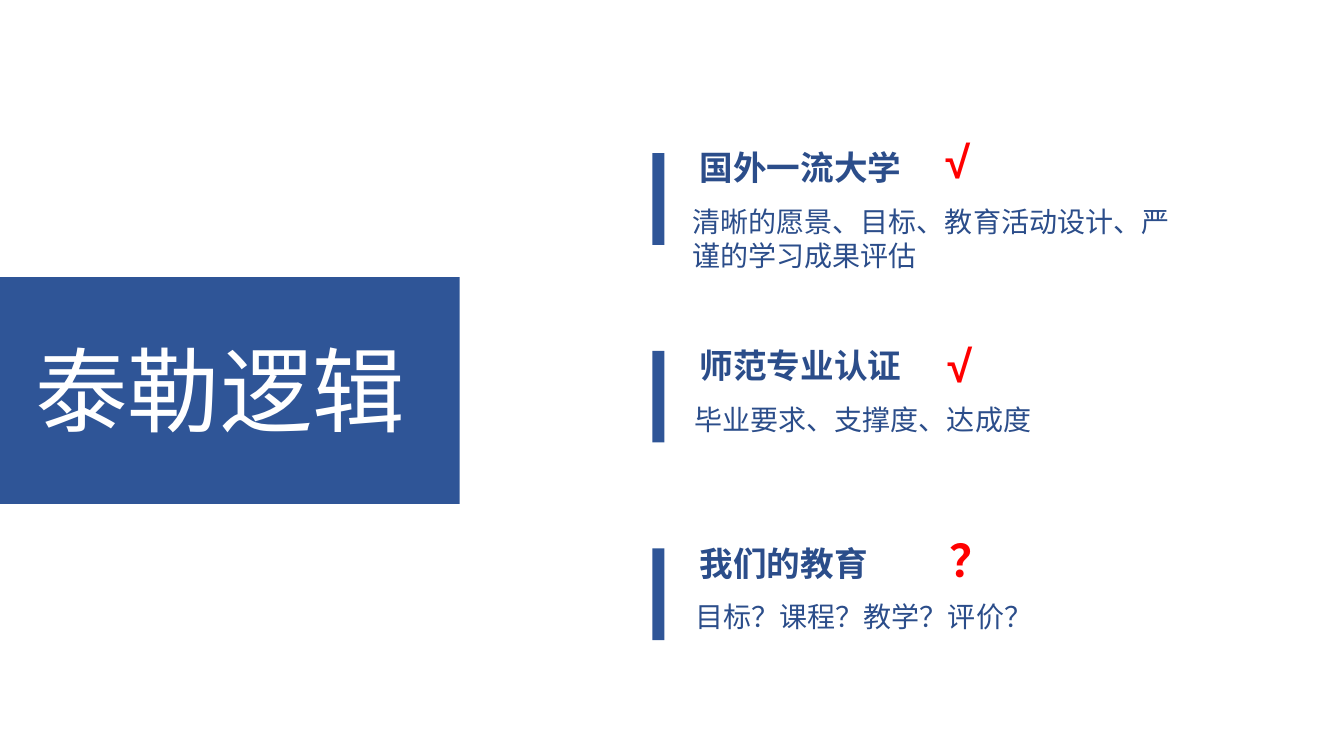
import pptx
import pptx.dml.color
import pptx.enum.shapes
import pptx.enum.text
import pptx.util

Inches = pptx.util.Inches
RGBColor = pptx.dml.color.RGBColor
Anchor = pptx.enum.text.MSO_ANCHOR
Align = pptx.enum.text.PP_ALIGN

BLUE = RGBColor(0x2F, 0x55, 0x97)
TEXT_BLUE = RGBColor(0x2B, 0x4D, 0x8A)
RED = RGBColor(0xFF, 0x00, 0x00)
WHITE = RGBColor(0xFF, 0xFF, 0xFF)


def write_text(frame, text, size, color, bold=False, align=Align.LEFT):
    paragraph = frame.paragraphs[0]
    paragraph.alignment = align
    run = paragraph.add_run()
    run.text = text
    run.font.name = "Arial"
    run.font.size = pptx.util.Pt(size)
    run.font.bold = bold
    run.font.color.rgb = color


class SlideBuilder:
    def __init__(self, slide):
        self.slide = slide

    def bar(self, left, top, width, height):
        shape = self.slide.shapes.add_shape(
            pptx.enum.shapes.MSO_SHAPE.RECTANGLE,
            Inches(left), Inches(top), Inches(width), Inches(height))
        shape.shadow.inherit = False
        shape.fill.solid()
        shape.fill.fore_color.rgb = BLUE
        shape.line.fill.background()

    def text(self, left, top, width, height, text, anchor=Anchor.TOP,
             wrap=True, **style):
        box = self.slide.shapes.add_textbox(
            Inches(left), Inches(top), Inches(width), Inches(height))
        box.text_frame.word_wrap = wrap
        box.text_frame.vertical_anchor = anchor
        write_text(box.text_frame, text, **style)

    def topic(self, top, heading, detail, detail_left, mark, mark_left,
              mark_offset, mark_width):
        self.bar(6.47, top + 0.3, 0.12, 0.91)
        self.text(6.84, top, 4.95, 0.69, heading, Anchor.BOTTOM,
                  size=24, color=TEXT_BLUE, bold=True)
        self.text(detail_left, top + 0.76, 4.95, 0.79, detail,
                  size=20, color=TEXT_BLUE)
        self.text(mark_left, top + mark_offset, mark_width, 0.64, mark,
                  wrap=False, size=32, color=RED, bold=True)


def main():
    presentation = pptx.Presentation()
    presentation.slide_width = Inches(13.33)
    presentation.slide_height = Inches(7.5)
    builder = SlideBuilder(
        presentation.slides.add_slide(presentation.slide_layouts[6]))

    # Title block
    builder.bar(0, 2.75, 4.56, 2.25)
    builder.text(0, 2.91, 4.37, 1.89, "泰勒逻辑", Anchor.MIDDLE,
                 size=66, color=WHITE, align=Align.CENTER)

    # Topics, evenly spaced down the right side
    topics = [
        ("国外一流大学", "清晰的愿景、目标、教育活动设计、严谨的学习成果评估",
         6.77, "√", 9.28, 0.06, 0.44),
        ("师范专业认证", "毕业要求、支撑度、达成度",
         6.79, "√", 9.3, 0.12, 0.44),
        ("我们的教育", "目标？课程？教学？评价？",
         6.8, "？", 9.32, 0.1, 0.64),
    ]
    for index, topic in enumerate(topics):
        builder.topic(1.22 + 1.96 * index, *topic)

    presentation.save("out.pptx")


if __name__ == "__main__":
    main()
